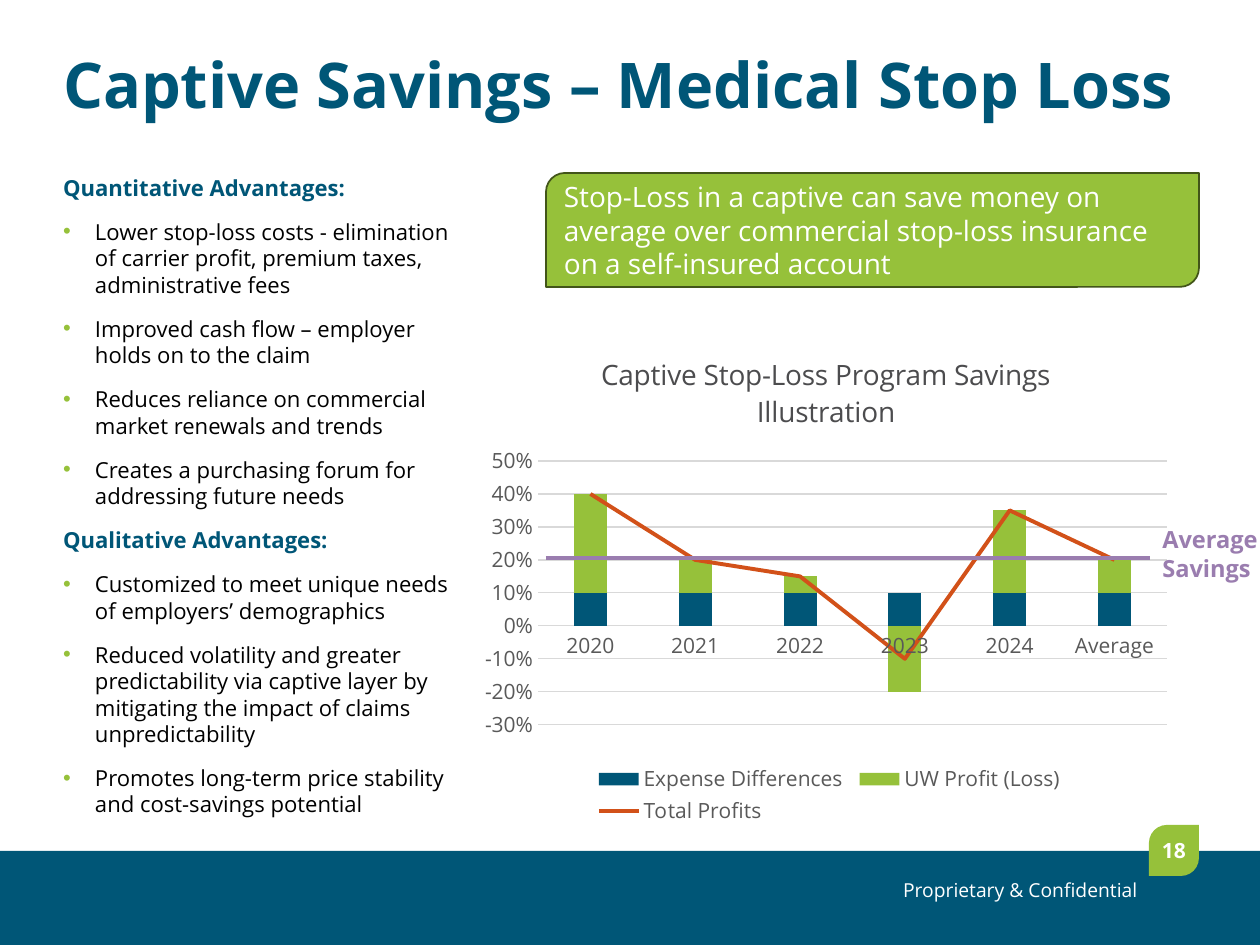
from copy import deepcopy

from lxml.etree import SubElement
from pptx import Presentation
from pptx.chart.data import CategoryChartData
from pptx.dml.color import RGBColor
from pptx.enum.chart import XL_CHART_TYPE, XL_LEGEND_POSITION, XL_MARKER_STYLE, XL_TICK_MARK
from pptx.enum.shapes import MSO_CONNECTOR, MSO_SHAPE
from pptx.enum.text import MSO_ANCHOR, MSO_AUTO_SIZE, PP_ALIGN
from pptx.oxml import parse_xml
from pptx.oxml.ns import nsdecls, qn
from pptx.util import Emu, Pt

FONT = "Open Sans"
BLUE, GREEN, ORANGE, PURPLE = "005677", "96C13A", "D25119", "9A7DAF"
WHITE, BLACK, GREY, RULE = "FFFFFF", "000000", "595959", "D9D9D9"

ADVANTAGES = {
    "Quantitative Advantages:": [
        "Lower stop-loss costs - elimination of carrier profit, premium taxes, administrative fees",
        "Improved cash flow – employer holds on to the claim",
        "Reduces reliance on commercial market renewals and trends",
        "Creates a purchasing forum for addressing future needs",
    ],
    "Qualitative Advantages:": [
        "Customized to meet unique needs of employers’ demographics",
        "Reduced volatility and greater predictability via captive layer by mitigating "
        "the impact of claims unpredictability",
        "Promotes long-term price stability and cost-savings potential",
    ],
}
YEARS = ["2020", "2021", "2022", "2023", "2024", "Average"]
SAVINGS = {
    "Expense Differences": [0.1] * 6,
    "UW Profit (Loss)": [0.3, 0.1, 0.05, -0.2, 0.25, 0.1],
    "Total Profits": [0.4, 0.2, 0.15, -0.1, 0.35, 0.2],
}


def px(length):
    """Turn pixels into EMU."""
    return Emu(round(length * 914400 / 126))


def rgb(color):
    """Turn a hex string into a colour."""
    return RGBColor.from_string(color)


def style_font(font, size, color, bold=False):
    """Set the face, size, colour and weight of a font."""
    font.name, font.size, font.bold = FONT, Pt(size), bold
    font.color.rgb = rgb(color)


def write(para, text, size, color, bold=False, align=PP_ALIGN.LEFT):
    """Fill a paragraph with one formatted text."""
    para.text = text
    para.alignment, para.line_spacing = align, 1.0
    for span in para.runs:
        style_font(span.font, size, color, bold)


def place(shape, box):
    """Move a shape to a box of left, top, width and height."""
    shape.left, shape.top, shape.width, shape.height = map(px, box)


def clear_insets(frame):
    """Remove the inner margins of a text frame."""
    frame.margin_left = frame.margin_top = frame.margin_right = frame.margin_bottom = 0


def add_panel(page, kind, box, fill, line=None):
    """Add a flat filled shape."""
    panel = page.shapes.add_shape(kind, *map(px, box))
    panel.shadow.inherit = False
    panel.fill.solid()
    panel.fill.fore_color.rgb = rgb(fill)
    if line:
        panel.line.color.rgb, panel.line.width = rgb(line), Pt(1)
    else:
        panel.line.fill.background()
    panel.text_frame.word_wrap = True
    panel.text_frame.vertical_anchor = MSO_ANCHOR.MIDDLE
    return panel


def add_label(page, box, *text, **form):
    """Add a wrapping text box and return its frame."""
    frame = page.shapes.add_textbox(*map(px, box)).text_frame
    frame.word_wrap = True
    write(frame.paragraphs[0], *text, **form)
    return frame


def fill_placeholder(shape, box):
    """Prepare a placeholder and return its text frame."""
    place(shape, box)
    frame = shape.text_frame
    clear_insets(frame)
    frame.auto_size, frame.vertical_anchor = MSO_AUTO_SIZE.NONE, MSO_ANCHOR.TOP
    return frame


def add_title(page, box):
    """Write the slide title."""
    frame = fill_placeholder(page.shapes.title, box)
    write(frame.paragraphs[0], "Captive Savings – Medical Stop Loss", 36, BLUE, True)


def set_bullet(para, shown):
    """Give a paragraph a green bullet or none."""
    props = para._p.get_or_add_pPr()
    props.set("marL", str(px(32) if shown else 0))
    props.set("indent", str(-px(32) if shown else 0))
    if not shown:
        SubElement(props, qn("a:buNone"))
        return
    SubElement(SubElement(props, qn("a:buClr")), qn("a:srgbClr"), val=GREEN)
    SubElement(props, qn("a:buFont"), typeface="Arial")
    SubElement(props, qn("a:buChar"), char="•")


def add_advantages(page, box):
    """Write the headed bullet lists."""
    frame = fill_placeholder(page.placeholders[1], box)
    rows = [(text, text == head) for head, items in ADVANTAGES.items() for text in [head, *items]]
    for index, (text, is_head) in enumerate(rows):
        para = frame.add_paragraph() if index else frame.paragraphs[0]
        set_bullet(para, not is_head)
        para.space_before, para.space_after = Pt(10 if index else 0), Pt(0)
        write(para, text, 12.6, BLUE if is_head else BLACK, is_head)


def add_callout(page, box):
    """Add the green key message."""
    panel = add_panel(page, MSO_SHAPE.ROUND_2_DIAG_RECTANGLE, box, GREEN, "425519")
    write(panel.text_frame.paragraphs[0],
          "Stop-Loss in a captive can save money on average over commercial "
          "stop-loss insurance on a self-insured account", 16, WHITE)


def add_layout(element, area, left, top, width=None, height=None, inner=False):
    """Fix a chart part at a place in px inside the chart area."""
    for old in element.findall(qn("c:layout")):
        element.remove(old)
    across, down = area
    target = '<c:layoutTarget val="inner"/>' if inner else ""
    sizes = f'<c:w val="{width / across}"/><c:h val="{height / down}"/>' if width else ""
    layout = parse_xml(
        f'<c:layout {nsdecls("c")}><c:manualLayout>{target}<c:xMode val="edge"/>'
        f'<c:yMode val="edge"/><c:x val="{left / across}"/><c:y val="{top / down}"/>{sizes}'
        '</c:manualLayout></c:layout>')
    before = element.find(qn("c:tx"))
    if before is None:
        before = element.find(qn("c:legendPos"))
    if before is None:
        element.insert(0, layout)
    else:
        before.addnext(layout)


def move_last_series_to_line(chart):
    """Turn the last column series into a line on the same axes."""
    bars = chart.plots[0]._element
    series = bars.findall(qn("c:ser"))[-1]
    for flag in series.findall(qn("c:invertIfNegative")):
        series.remove(flag)
    lines = parse_xml(f'<c:lineChart {nsdecls("c")}><c:grouping val="standard"/>'
                      '<c:varyColors val="0"/></c:lineChart>')
    lines.append(series)
    SubElement(lines, qn("c:marker")).set("val", "1")
    for axis in bars.findall(qn("c:axId")):
        lines.append(deepcopy(axis))
    bars.addnext(lines)


def style_axes(chart):
    """Format both axes and the gridlines."""
    for axis in (chart.category_axis, chart.value_axis):
        axis.major_tick_mark = axis.minor_tick_mark = XL_TICK_MARK.NONE
        style_font(axis.tick_labels.font, 12, GREY)
    values = chart.value_axis
    values.minimum_scale, values.maximum_scale, values.major_unit = -0.3, 0.5, 0.1
    values.tick_labels.number_format, values.tick_labels.number_format_is_linked = "0%", False
    values.format.line.fill.background()
    for line in (chart.category_axis.format.line, values.major_gridlines.format.line):
        line.color.rgb, line.width = rgb(RULE), Pt(0.75)


def add_savings_chart(page, box):
    """Add the stacked columns with the total line."""
    data = CategoryChartData(number_format="0%")
    data.categories = YEARS
    for name, values in SAVINGS.items():
        data.add_series(name, values)
    chart = page.shapes.add_chart(XL_CHART_TYPE.COLUMN_STACKED, *map(px, box), data).chart
    style_font(chart.font, 10, BLACK)
    chart.has_title = True
    heading = chart.chart_title.text_frame.paragraphs[0]
    write(heading, "Captive Stop-Loss Program Savings Illustration", 16, "4C4C4E", align=PP_ALIGN.CENTER)
    chart.has_legend = True
    chart.legend.position, chart.legend.include_in_layout = XL_LEGEND_POSITION.BOTTOM, False
    style_font(chart.legend.font, 12, GREY)
    style_axes(chart)
    move_last_series_to_line(chart)
    columns, lines = chart.plots
    columns.gap_width, columns.overlap, columns.vary_by_categories = 219, 100, False
    for series, color in zip(columns.series, (BLUE, GREEN)):
        series.format.fill.solid()
        series.format.fill.fore_color.rgb = rgb(color)
        series.invert_if_negative = False
    total = lines.series[0]
    total.smooth, total.marker.style = False, XL_MARKER_STYLE.NONE
    total.format.line.color.rgb, total.format.line.width = rgb(ORANGE), Pt(2.25)
    area = box[2:]
    add_layout(chart._chartSpace.chart.plotArea, area, 67, 127, 629, 264, inner=True)
    add_layout(chart.chart_title._element, area, 125, 14)
    add_layout(chart.legend._element, area, 118, 428, 481, 66)


def add_average(page, box):
    """Add the average line and its label at the right end."""
    left, top, width, height = box
    level = top + 39
    rule = page.shapes.add_connector(
        MSO_CONNECTOR.STRAIGHT, *map(px, (left, level, left + 604, level)))
    rule.line.color.rgb, rule.line.width = rgb(PURPLE), Pt(2.25)
    SubElement(rule._element.spPr, qn("a:effectLst"))
    frame = add_label(page, (left + 604, top, width - 604, height),
                      "Average Savings", 13.5, PURPLE, True)
    frame.margin_right = 0


def add_footer(page, box):
    """Add the footer band, its note and the page number."""
    left, top, width, height = box
    add_panel(page, MSO_SHAPE.RECTANGLE, box, BLUE)
    add_label(page, (left + 667, top + 21, 483, 37), "Proprietary & Confidential",
              11, WHITE, align=PP_ALIGN.RIGHT)
    badge = add_panel(page, MSO_SHAPE.ROUND_2_DIAG_RECTANGLE, (left + 1149, top - 26, 50, 51), GREEN)
    badge.adjustments[0], badge.adjustments[1] = 0.36, 0
    clear_insets(badge.text_frame)
    write(badge.text_frame.paragraphs[0], "18", 12, WHITE, True, PP_ALIGN.CENTER)


def main():
    """Build and save the deck."""
    deck = Presentation()
    deck.slide_width, deck.slide_height = px(1260), px(945)
    page = deck.slides.add_slide(deck.slide_layouts[1])
    add_footer(page, (0, 851, 1260, 94))
    add_title(page, (63, 46, 1135, 71))
    add_advantages(page, (63, 174, 408, 675))
    add_savings_chart(page, (471, 334, 711, 498))
    add_average(page, (546, 519, 714, 71))
    add_callout(page, (546, 173, 653, 114))
    deck.save("out.pptx")


if __name__ == "__main__":
    main()
